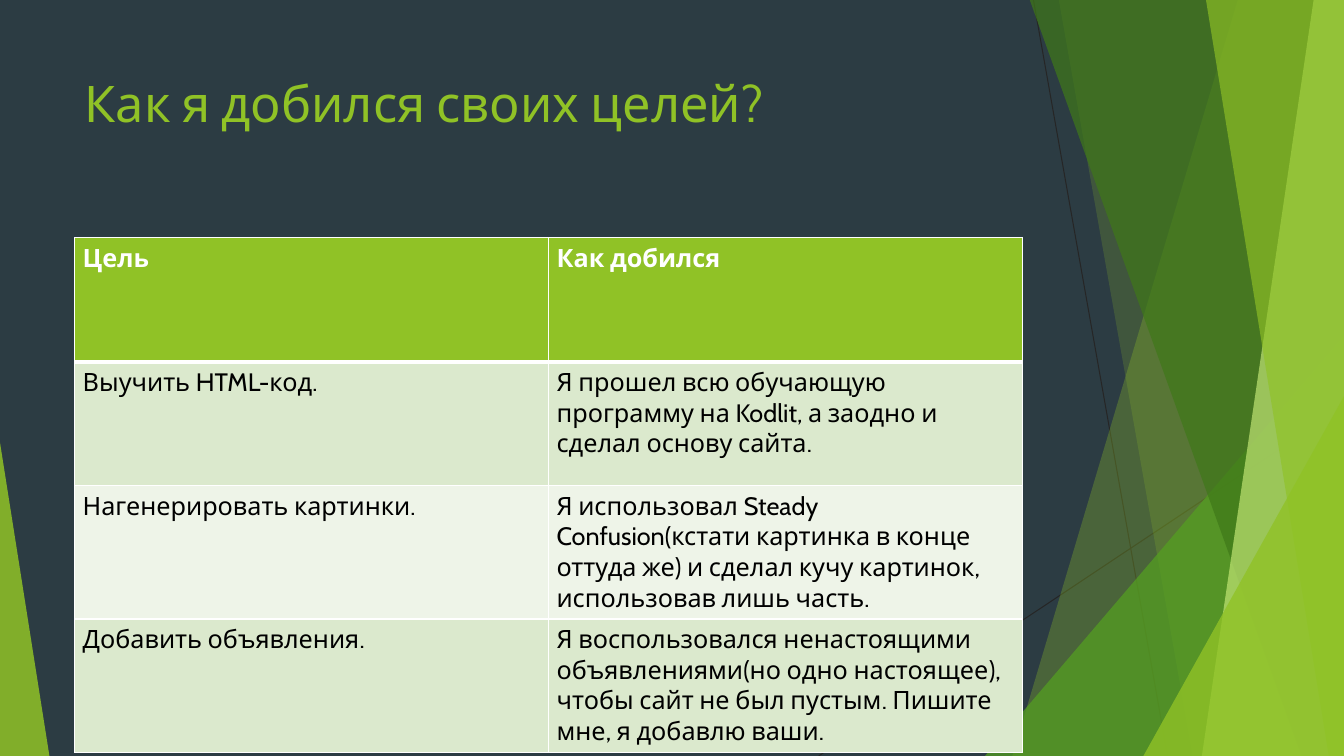
from lxml.etree import SubElement
from pptx import Presentation
from pptx.dml.color import RGBColor
from pptx.enum.shapes import MSO_CONNECTOR, MSO_SHAPE
from pptx.enum.text import MSO_ANCHOR, PP_ALIGN
from pptx.oxml.ns import qn
from pptx.util import Inches, Pt

# Content
TITLE = "Как я добился своих целей?"
ROWS = [
    ("Цель", "Как добился"),
    ("Выучить HTML-код.",
     "Я прошел всю обучающую программу на Kodlit, а заодно и сделал основу сайта."),
    ("Нагенерировать картинки.",
     "Я использовал Steady Confusion(кстати картинка в конце оттуда же) "
     "и сделал кучу картинок, использовав лишь часть."),
    ("Добавить объявления.",
     "Я воспользовался ненастоящими объявлениями(но одно настоящее), "
     "чтобы сайт не был пустым. Пишите мне, я добавлю ваши."),
]
FONT = "Cabin"
COLORS = {
    "back": "2C3C43", "line": "262626", "lime": "90C226", "green": "54A021",
    "dark": "3F7819", "pale": "C0E474", "white": "FFFFFF", "black": "000000",
    "odd": "DBE9CD", "even": "EEF4E8",
}
WIDE, HIGH, TOP = 13.33, 7.5, -0.01
LEFT, SPAN = 0.74, 9.4

# Decoration, from back to front
LINES = [((10.25, 0), (11.58, HIGH)), ((WIDE, 4.03), (8.12, HIGH))]
# Bands reach the right edge: top x, bottom x, colour, opacity in percent
# Wedges stand on the bottom edge: left, top, width, apex, colour, opacity
DECOR = [
    ("band", 12.28, 10.04, "lime", 30),
    ("band", 10.5, 11.83, "lime", 20),
    ("wedge", 9.77, 3.33, 3.56, 1, "green", 72),
    ("band", 10.21, 12.91, "dark", 70),
    ("band", 13.03, 11.92, "pale", 70),
    ("band", 11.96, 13.18, "lime", 65),
    ("wedge", 11.34, 3.93, 1.99, 1, "lime", 80),
    ("wedge", 0, 4.39, 0.49, 0, "lime", 85),
]


def color(name):
    return RGBColor.from_string(COLORS[name])


def write(frame, text, size=18, tint="black", bold=False):
    frame.word_wrap = True
    par = frame.paragraphs[0]
    par.alignment = PP_ALIGN.LEFT
    run = par.add_run()
    run.text = text
    font = run.font
    font.name, font.size, font.bold = FONT, Pt(size), bold
    font.color.rgb = color(tint)


def paint(shape, tint, alpha):
    shape.shadow.inherit = False
    shape.line.fill.background()
    shape.fill.solid()
    shape.fill.fore_color.rgb = color(tint)
    clr = shape.fill._xPr.find(qn("a:solidFill"))[0]
    SubElement(clr, qn("a:alpha"), val=str(alpha * 1000))


def band(shapes, top, base, tint, alpha):
    pts = [(top, TOP), (WIDE, TOP), (WIDE, HIGH), (base, HIGH)]
    pts = [(Inches(x), Inches(y)) for x, y in pts]
    form = shapes.build_freeform(*pts[0])
    form.add_line_segments(pts[1:], close=True)
    paint(form.convert_to_shape(), tint, alpha)


def wedge(shapes, left, top, width, apex, tint, alpha):
    shape = shapes.add_shape(MSO_SHAPE.ISOSCELES_TRIANGLE, Inches(left),
                             Inches(top), Inches(width), Inches(HIGH - top))
    shape.adjustments[0] = apex
    paint(shape, tint, alpha)


def border(cell, side, width):
    line = SubElement(cell._tc.get_or_add_tcPr(), qn("a:ln" + side),
                      w=str(Pt(width)))
    fill = SubElement(line, qn("a:solidFill"))
    SubElement(fill, qn("a:srgbClr"), val=COLORS["white"])


def main():
    prs = Presentation()
    prs.slide_width, prs.slide_height = Inches(WIDE), Inches(HIGH)
    slide = prs.slides.add_slide(prs.slide_layouts[5])
    shapes = slide.shapes
    slide.background.fill.solid()
    slide.background.fill.fore_color.rgb = color("back")

    # Decoration
    for start, end in LINES:
        line = shapes.add_connector(MSO_CONNECTOR.STRAIGHT,
                                    *[Inches(n) for n in start + end])
        line.line.color.rgb = color("line")
        line.line.width = Pt(0.75)
        SubElement(line._element.spPr, qn("a:effectLst"))
    draw = {"band": band, "wedge": wedge}
    for kind, *args in DECOR:
        draw[kind](shapes, *args)

    # Title
    title = shapes.title
    title.left, title.top = Inches(LEFT), Inches(0.67)
    title.width, title.height = Inches(SPAN), Inches(1.44)
    title.text_frame.vertical_anchor = MSO_ANCHOR.TOP
    write(title.text_frame, TITLE, size=36, tint="lime")

    # Table
    step = 1.23
    table = shapes.add_table(len(ROWS), 2, Inches(LEFT), Inches(2.36),
                             Inches(SPAN), Inches(step * len(ROWS))).table
    for r, row in enumerate(ROWS):
        table.rows[r].height = Inches(step)
        head = r == 0
        for c, text in enumerate(row):
            cell = table.cell(r, c)
            cell.margin_left = cell.margin_right = Inches(0.08)
            cell.margin_top = cell.margin_bottom = Inches(0.05)
            for side in "LRTB":
                thick = (head and side == "B") or (r == 1 and side == "T")
                border(cell, side, 3 if thick else 1)
            cell.fill.solid()
            cell.fill.fore_color.rgb = color(
                "lime" if head else "odd" if r % 2 else "even")
            write(cell.text_frame, text, bold=head,
                  tint="white" if head else "black")

    prs.save("out.pptx")


if __name__ == "__main__":
    main()
